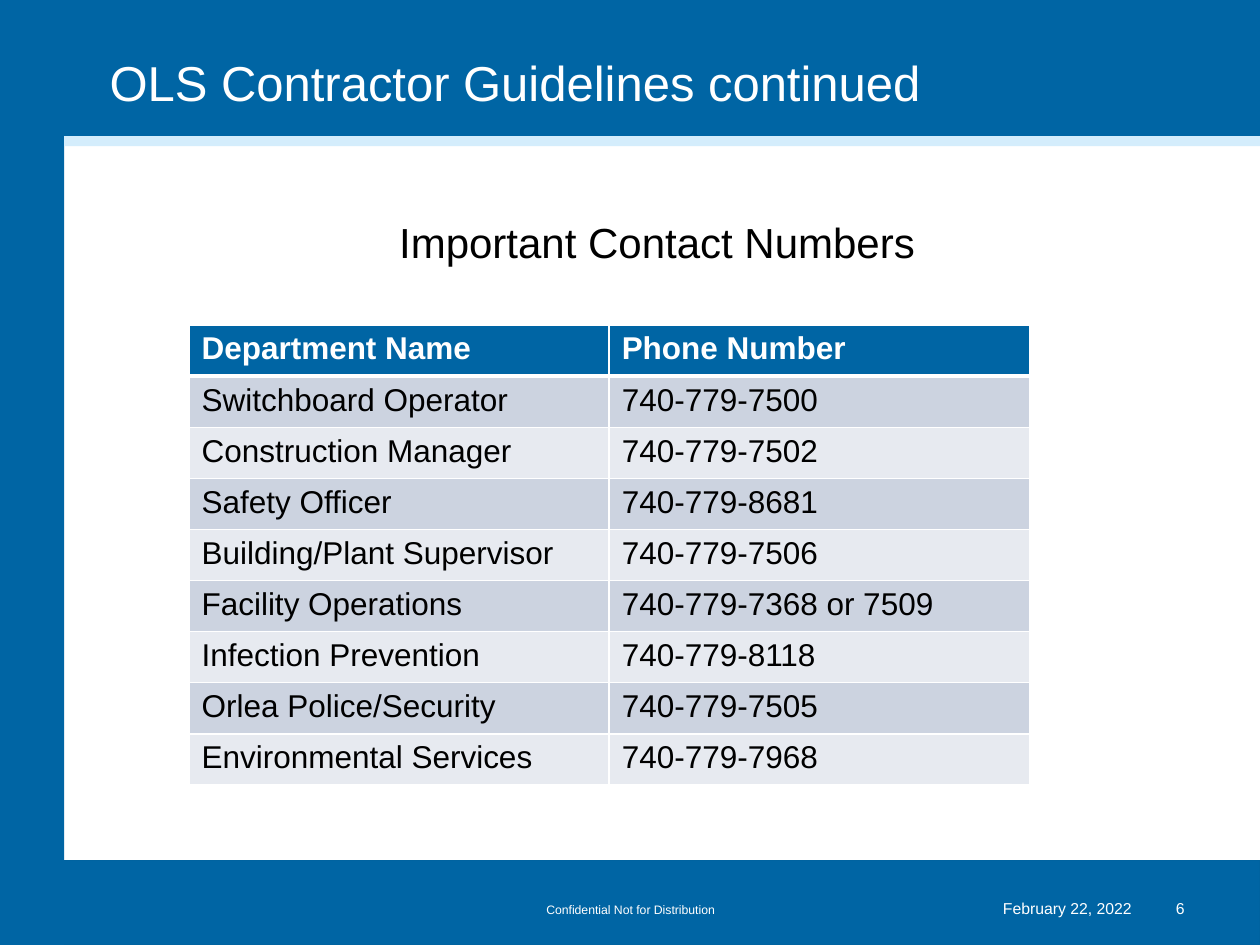
from typing import NamedTuple

from pptx import Presentation
from pptx.dml.color import RGBColor
from pptx.enum.shapes import MSO_SHAPE
from pptx.enum.text import MSO_ANCHOR, MSO_AUTO_SIZE, PP_ALIGN
from pptx.oxml.ns import qn
from pptx.util import Inches, Pt
from lxml import etree

RECT = MSO_SHAPE.RECTANGLE
LEFT, MID, RIGHT = PP_ALIGN.LEFT, PP_ALIGN.CENTER, PP_ALIGN.RIGHT
CENTER, BOTTOM, TOP = MSO_ANCHOR.MIDDLE, MSO_ANCHOR.BOTTOM, MSO_ANCHOR.TOP
FIXED = MSO_AUTO_SIZE.NONE
BLUE, PALE, WHITE, BLACK = "0065A4", "D4EDFC", "FFFFFF", "000000"
BANDS = ("CCD3E0", "E7EAF0")


class Box(NamedTuple):
    left: float
    top: float
    width: float
    height: float


class Bar(NamedTuple):
    box: Box
    fill: str
    line: str = ""


class Note(NamedTuple):
    box: Box
    text: str
    size: float
    align: PP_ALIGN


BARS = [
    Bar(Box(0, 6.83, 10, 0.67), BLUE, "0063A0"),
    Bar(Box(0, 0, 10, 1.08), BLUE),
    Bar(Box(0, 0, 0.51, 7.5), BLUE),
    Bar(Box(0.51, 1.08, 9.49, 0.08), PALE),
]
NOTES = [
    Note(Box(8.83, 6.93, 0.67, 0.4), "6", 9, RIGHT),
    Note(Box(6.83, 6.93, 2.25, 0.4), "February 22, 2022", 9, RIGHT),
    Note(Box(3.42, 6.93, 3.17, 0.4), "Confidential Not for Distribution", 7, MID),
]
ROWS = [
    ("Department Name", "Phone Number"),
    ("Switchboard Operator", "740-779-7500"),
    ("Construction Manager", "740-779-7502"),
    ("Safety Officer", "740-779-8681"),
    ("Building/Plant Supervisor", "740-779-7506"),
    ("Facility Operations", "740-779-7368 or 7509"),
    ("Infection Prevention", "740-779-8118"),
    ("Orlea Police/Security", "740-779-7505"),
    ("Environmental Services", "740-779-7968"),
]
GRID = Box(1.5, 2.58, 6.67, 3.65)


def color(code: str) -> RGBColor:
    return RGBColor.from_string(code)


def inches(box: Box) -> list:
    return [Inches(side) for side in box]


def write(frame, text: str, size: float, tint: str,
          align: PP_ALIGN = LEFT, bold: bool = False):
    """Fill a text frame with one formatted paragraph and return it."""
    frame.text = text
    para = frame.paragraphs[0]
    para.alignment = align
    font = para.runs[0].font
    style = {"name": "Arial", "size": Pt(size), "bold": bold}
    for key, value in style.items():
        setattr(font, key, value)
    font.color.rgb = color(tint)
    return para


def settle(frame, anchor: MSO_ANCHOR) -> None:
    """Give a text frame wrapping, a fixed size and an anchor."""
    style = {"word_wrap": True, "auto_size": FIXED, "vertical_anchor": anchor}
    for key, value in style.items():
        setattr(frame, key, value)


def place(shape, box: Box) -> None:
    for key, value in zip(box._fields, inches(box)):
        setattr(shape, key, value)


def draw_bar(slide, bar: Bar) -> None:
    shape = slide.shapes.add_shape(RECT, *inches(bar.box))
    shape.shadow.inherit = False
    shape.fill.solid()
    shape.fill.fore_color.rgb = color(bar.fill)
    if bar.line:
        shape.line.color.rgb = color(bar.line)
        shape.line.width = Pt(0.75)
    else:
        shape.line.fill.background()


def draw_note(slide, note: Note) -> None:
    frame = slide.shapes.add_textbox(*inches(note.box)).text_frame
    settle(frame, BOTTOM)
    write(frame, note.text, note.size, WHITE, note.align)


def edge(cell, base: float) -> None:
    """Draw white cell borders, with the bottom one base points wide."""
    props = cell._tc.get_or_add_tcPr()
    widths = {"L": 1, "R": 1, "T": 1, "B": base}
    for spot, (side, width) in enumerate(widths.items()):
        line = etree.Element(qn(f"a:ln{side}"), w=str(Pt(width)))
        fill = etree.SubElement(line, qn("a:solidFill"))
        etree.SubElement(fill, qn("a:srgbClr"), val=WHITE)
        props.insert(spot, line)


def draw_table(slide, rows: list, box: Box) -> None:
    count, span = len(rows), len(rows[0])
    table = slide.shapes.add_table(count, span, *inches(box)).table
    for col in table.columns:
        col.width = Inches(box.width / span)
    for r, row in enumerate(rows):
        table.rows[r].height = Inches(box.height / count)
        head = r == 0
        above = r <= 1
        for c, text in enumerate(row):
            cell = table.cell(r, c)
            cell.fill.solid()
            cell.fill.fore_color.rgb = color(BLUE if head else BANDS[(r - 1) % 2])
            edge(cell, 3 if head else 1)
            if above and not head:
                cell._tc.tcPr.find(qn("a:lnT")).set("w", str(Pt(3)))
            write(cell.text_frame, text, 18, WHITE if head else BLACK, bold=head)


def main() -> None:
    deck = Presentation()
    deck.slide_width, deck.slide_height = Inches(10), Inches(7.5)
    slide = deck.slides.add_slide(deck.slide_layouts[1])
    title, body = slide.placeholders

    for bar in BARS:
        draw_bar(slide, bar)
    for note in NOTES:
        draw_note(slide, note)

    # Bring the placeholders in front of the bars.
    for holder in (title, body):
        slide.shapes._spTree.append(holder._element)

    place(title, Box(0.77, 0.13, 8.73, 1.04))
    settle(title.text_frame, CENTER)
    write(title.text_frame, "OLS Contractor Guidelines continued", 28, WHITE)

    place(body, Box(0.51, 1.67, 9.41, 5.08))
    settle(body.text_frame, TOP)
    para = write(body.text_frame, "Important Contact Numbers", 24, BLACK, MID)
    para.space_before = Pt(0)
    props = para._p.get_or_add_pPr()
    props.set("marL", "0")
    props.set("indent", "0")
    etree.SubElement(props, qn("a:buNone"))

    draw_table(slide, ROWS, GRID)
    deck.save("out.pptx")


if __name__ == "__main__":
    main()
